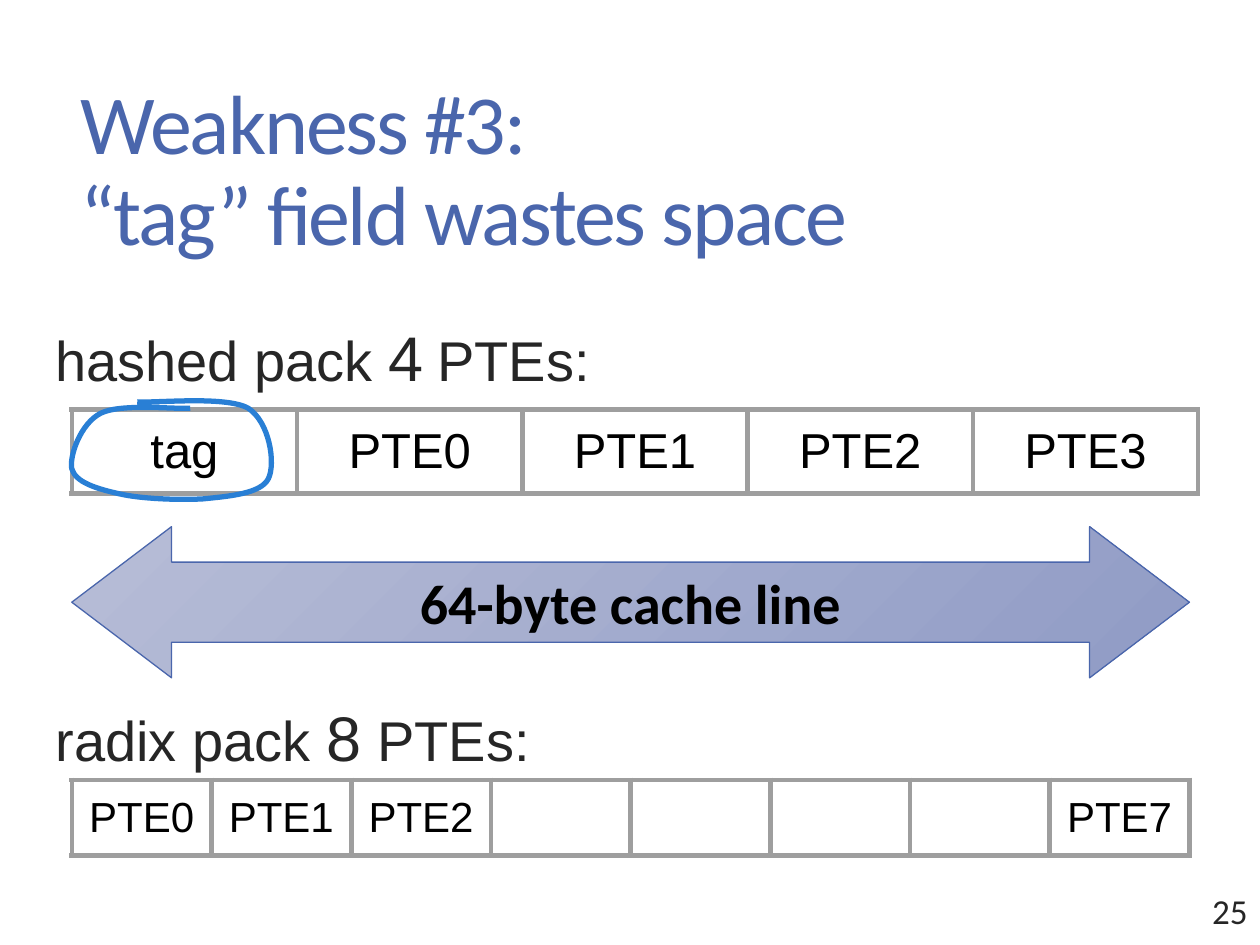
from lxml import etree
from pptx import Presentation
from pptx.dml.color import RGBColor
from pptx.enum.shapes import MSO_SHAPE
from pptx.enum.text import MSO_ANCHOR, PP_ALIGN
from pptx.oxml.ns import qn
from pptx.util import Inches, Pt

CENTER, RIGHT = PP_ALIGN.CENTER, PP_ALIGN.RIGHT
TOP, MIDDLE = MSO_ANCHOR.TOP, MSO_ANCHOR.MIDDLE
DOUBLE_ARROW = MSO_SHAPE.LEFT_RIGHT_ARROW

COLORS = {"title": "4A66AC", "text": "262626", "black": "000000",
          "border": "9E9E9E", "ink": "297FD5",
          "arrow_start": "B7BDD7", "arrow_end": "909BC5"}

TITLE = ["Weakness #3:", "“tag” field wastes space"]
HASHED_LABEL = [("hashed pack ", 32), ("4", 36), (" ", 28), ("PTEs:", 32)]
RADIX_LABEL = [("radix pack ", 32), ("8", 36), (" PTEs:", 32)]
HASHED_CELLS = ["tag", "PTE0", "PTE1", "PTE2", "PTE3"]
RADIX_CELLS = ["PTE0", "PTE1", "PTE2", "", "", "", "", "PTE7"]
ARROW_TEXT = "64-byte cache line"
PAGE_NUMBER = "25"
TAG_CIRCLE = [
    (1.51, 3.24),
    (1.39, 3.25), (0.96, 3.2), (0.8, 3.28),
    (0.64, 3.36), (0.55, 3.62), (0.57, 3.72),
    (0.6, 3.83), (0.77, 3.88), (0.95, 3.92),
    (1.12, 3.96), (1.42, 3.97), (1.61, 3.96),
    (1.81, 3.94), (2.07, 3.92), (2.13, 3.8),
    (2.19, 3.68), (2.14, 3.35), (1.97, 3.24),
    (1.79, 3.14), (1.24, 3.2), (1.09, 3.19),
]

LEFT, LINE_WIDTH = 0.57, 8.87
LABEL_LEFT, LABEL_WIDTH, LABEL_HEIGHT = 0.34, 8.98, 0.78


def rgb(key):
    return RGBColor.from_string(COLORS[key])


def box(*lengths):
    return [Inches(length) for length in lengths]


def place(shape, *lengths):
    shape.left, shape.top, shape.width, shape.height = box(*lengths)


def add_run(paragraph, text, size, color, font="Arial", bold=False):
    run = paragraph.add_run()
    run.text = text
    run.font.size, run.font.name, run.font.bold = Pt(size), font, bold
    run.font.color.rgb = rgb(color)
    return run


def prepare(frame, anchor=TOP):
    frame.word_wrap = True
    frame.vertical_anchor = anchor
    frame.margin_left = frame.margin_right = Inches(0.1)
    frame.margin_top = frame.margin_bottom = Inches(0.1)
    return frame.paragraphs[0]


def write_label(shape, runs):
    paragraph = prepare(shape.text_frame)
    paragraph.line_spacing = 1.5
    paragraph.space_before = Pt(0)
    properties = paragraph._p.get_or_add_pPr()
    properties.set("marL", str(Inches(0.1)))
    properties.set("indent", str(Inches(-0.1)))
    etree.SubElement(properties, qn("a:buNone"))
    for text, size in runs:
        add_run(paragraph, text, size, "text")


def add_borders(cell):
    properties = cell._tc.get_or_add_tcPr()
    for side in ("lnL", "lnR", "lnT", "lnB"):
        line = etree.SubElement(properties, qn("a:" + side), w=str(Pt(3)))
        fill = etree.SubElement(line, qn("a:solidFill"))
        etree.SubElement(fill, qn("a:srgbClr"), val=COLORS["border"])


def add_cache_line(slide, entries, top, width, height, size):
    table = slide.shapes.add_table(
        1, len(entries), *box(LEFT, top, width, height)).table
    table.first_row = table.horz_banding = False
    table.rows[0].height = Inches(height)
    for column, cell, entry in zip(table.columns, table.rows[0].cells, entries):
        column.width = Inches(width / len(entries))
        add_borders(cell)
        cell.fill.background()
        cell.vertical_anchor = MIDDLE
        cell.margin_left = cell.margin_right = Inches(0.1)
        cell.margin_top = cell.margin_bottom = Inches(0.1)
        if entry:
            paragraph = cell.text_frame.paragraphs[0]
            paragraph.alignment = CENTER
            add_run(paragraph, entry, size, "black")


def add_curve(slide, points):
    start, *controls = [tuple(box(*point)) for point in points]
    builder = slide.shapes.build_freeform(*start)
    builder.add_line_segments(controls, close=False)
    curve = builder.convert_to_shape()
    segments = list(curve._element.iter(qn("a:lnTo")))
    for first in range(0, len(segments), 3):
        bezier = etree.Element(qn("a:cubicBezTo"))
        segments[first].addprevious(bezier)
        for segment in segments[first:first + 3]:
            bezier.append(segment[0])
            segment.getparent().remove(segment)
    curve.shadow.inherit = False
    curve.fill.background()
    curve.line.color.rgb = rgb("ink")
    curve.line.width = Pt(3)


def add_arrow(slide):
    arrow = slide.shapes.add_shape(
        DOUBLE_ARROW, *box(LEFT, 4.18, LINE_WIDTH, 1.2))
    arrow.adjustments[0], arrow.adjustments[1] = 0.53, 0.66
    arrow.shadow.inherit = False
    arrow.fill.gradient()
    arrow.fill.gradient_angle = 315
    for stop, key, position in zip(arrow.fill.gradient_stops,
                                   ("arrow_start", "arrow_end"), (0, 1)):
        stop.color.rgb = rgb(key)
        stop.position = position
    arrow.line.color.rgb = rgb("title")
    arrow.line.width = Pt(0.75)
    paragraph = prepare(arrow.text_frame, MIDDLE)
    paragraph.alignment = CENTER
    add_run(paragraph, ARROW_TEXT, 32, "black", "Calibri", True)


def add_title(title):
    place(title, 0.54, 0.55, 8.84, 1.81)
    paragraph = prepare(title.text_frame)
    paragraph.alignment = PP_ALIGN.LEFT
    paragraph.line_spacing = 0.9
    for index, line in enumerate(TITLE):
        if index:
            paragraph.add_line_break()
        run = add_run(paragraph, line, 48, "title", "Calibri")
        run.font._element.set("spc", "-120")


def main():
    deck = Presentation()
    deck.slide_width, deck.slide_height = box(10, 7.5)
    slide = deck.slides.add_slide(deck.slide_layouts[1])
    add_title(slide.shapes.title)

    radix_label = slide.placeholders[1]
    place(radix_label, LABEL_LEFT, 5.14, LABEL_WIDTH, LABEL_HEIGHT)
    write_label(radix_label, RADIX_LABEL)
    hashed_label = slide.shapes.add_textbox(
        *box(LABEL_LEFT, 2.13, LABEL_WIDTH, LABEL_HEIGHT))
    write_label(hashed_label, HASHED_LABEL)

    add_cache_line(slide, RADIX_CELLS, 6.19, LINE_WIDTH, 0.6, 24)
    add_cache_line(slide, HASHED_CELLS, 3.25, 8.94, 0.64, 28)
    add_curve(slide, TAG_CIRCLE)
    add_arrow(slide)

    page = slide.shapes.add_textbox(*box(9.38, 7.01, 0.62, 0.44))
    number = page.text_frame.paragraphs[0]
    page.text_frame.word_wrap = True
    number.alignment = RIGHT
    add_run(number, PAGE_NUMBER, 20, "text", "Calibri")
    deck.save("out.pptx")


if __name__ == "__main__":
    main()
